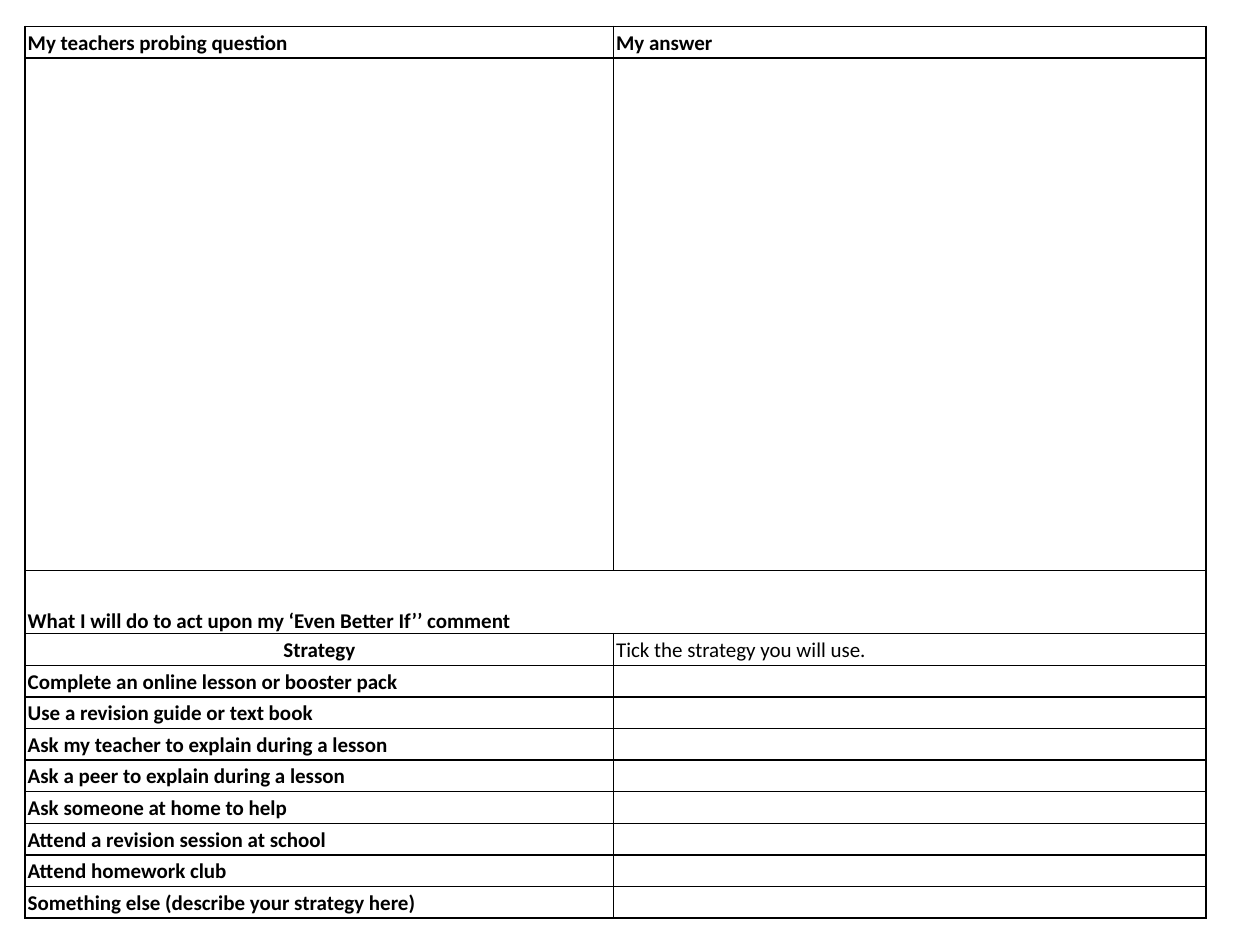
import pptx
import pptx.util
import pptx.dml.color
import pptx.enum.text
import pptx.oxml
import pptx.oxml.ns

theme = {
    "font": "Calibri",
    "size": pptx.util.Pt(12),
    "ink": pptx.dml.color.RGBColor(0, 0, 0),
    "border": pptx.util.Pt(1),
    "line_spacing": 1.15,
    "inset": pptx.util.Inches(0.02),
}

strategies = [
    "Complete an online lesson or booster pack",
    "Use a revision guide or text book",
    "Ask my teacher to explain during a lesson",
    "Ask a peer to explain during a lesson",
    "Ask someone at home to help",
    "Attend a revision session at school",
    "Attend homework club",
    "Something else (describe your strategy here)",
]
rows = [
    ("My teachers probing question", "My answer"),
    ("", ""),
    ("What I will do to act upon my ‘Even Better If’’ comment", ""),
    ("Strategy", "Tick the strategy you will use."),
] + [(strategy, "") for strategy in strategies]
answer_row, action_row, heading_row = 1, 2, 3

presentation = pptx.Presentation()
presentation.slide_width = pptx.util.Inches(10)
presentation.slide_height = pptx.util.Inches(7.5)
slide = presentation.slides.add_slide(presentation.slide_layouts[6])

left, top = pptx.util.Inches(0.2), pptx.util.Inches(0.21)
column_widths = [pptx.util.Inches(4.67), pptx.util.Inches(4.7)]
row_units = [1] * len(rows)
row_units[answer_row] = 16.2
row_units[action_row] = 2
table_height = pptx.util.Inches(7.08)
unit = table_height / sum(row_units)

table = slide.shapes.add_table(
    len(rows), len(column_widths), left, top, sum(column_widths), table_height
).table
table.first_row = False
table.horz_banding = False
for column, width in zip(table.columns, column_widths):
    column.width = width
for row, units in zip(table.rows, row_units):
    row.height = int(units * unit)


def add_borders(cell):
    properties = cell._tc.get_or_add_tcPr()
    for position, side in enumerate(("lnL", "lnR", "lnT", "lnB")):
        properties.insert(position, pptx.oxml.parse_xml(
            f'<a:{side} {pptx.oxml.ns.nsdecls("a")} w="{theme["border"]}">'
            f'<a:solidFill><a:srgbClr val="{theme["ink"]}"/></a:solidFill></a:{side}>'
        ))


for row_index, texts in enumerate(rows):
    for column_index, text in enumerate(texts):
        cell = table.cell(row_index, column_index)
        cell.fill.background()
        cell.margin_left = cell.margin_right = theme["inset"]
        cell.margin_top = cell.margin_bottom = 0
        add_borders(cell)
        cell.text = text
        paragraph = cell.text_frame.paragraphs[0]
        paragraph.line_spacing = theme["line_spacing"]
        paragraph.font.name = theme["font"]
        paragraph.font.size = theme["size"]
        paragraph.font.color.rgb = theme["ink"]
        paragraph.font.bold = (row_index, column_index) != (heading_row, 1)

table.cell(heading_row, 0).text_frame.paragraphs[0].alignment = pptx.enum.text.PP_ALIGN.CENTER
action_cell = table.cell(action_row, 0)
action_cell.merge(table.cell(action_row, 1))
action_cell.vertical_anchor = pptx.enum.text.MSO_ANCHOR.BOTTOM

presentation.save("out.pptx")
